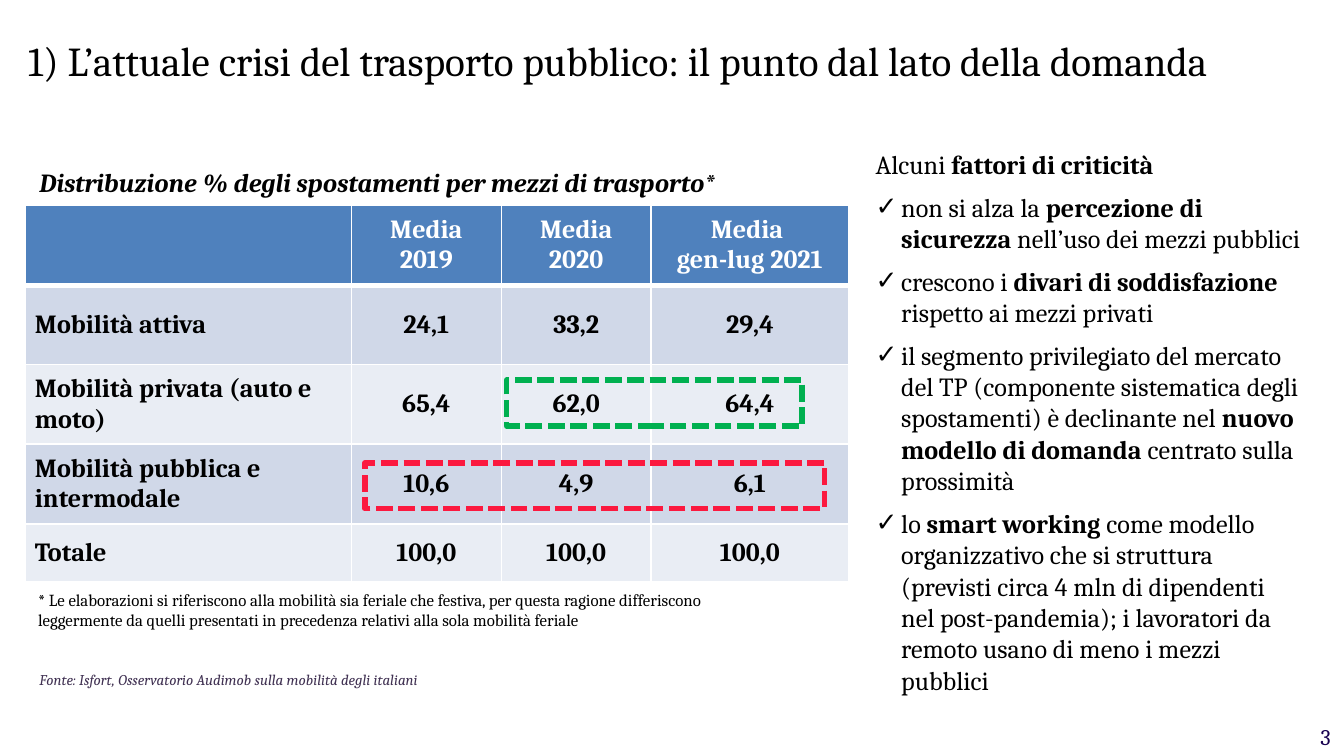
from dataclasses import dataclass

from lxml.etree import SubElement
from pptx import Presentation
from pptx.dml.color import RGBColor
from pptx.enum.dml import MSO_LINE_DASH_STYLE as Dash
from pptx.enum.shapes import MSO_SHAPE as Shape
from pptx.enum.text import MSO_ANCHOR as Anchor, MSO_AUTO_SIZE as AutoSize, PP_ALIGN as Align
from pptx.oxml.ns import qn
from pptx.util import Inches, Pt

# Grid: 100 columns by 56.25 rows of square cells
COLUMNS, ROWS, CELL = 100, 56.25, 0.1


@dataclass(frozen=True)
class Theme:
    font: str = "Cambria"
    black: str = "000000"
    white: str = "FFFFFF"
    header: str = "4F81BD"
    bands: tuple = ("D0D8E8", "E9EDF4")
    green: str = "00B050"
    red: str = "FB193F"
    source: str = "403152"
    number: str = "170050"
    title_size: float = 22
    body_size: float = 14
    number_size: float = 12
    note_size: float = 9
    source_size: float = 8


def grid(*cells):
    return [Inches(cell * CELL) for cell in cells]


class SlideBuilder:
    def __init__(self, theme):
        self.theme = theme
        self.presentation = Presentation()
        self.presentation.slide_width, self.presentation.slide_height = grid(COLUMNS, ROWS)
        self.slide = self.presentation.slides.add_slide(self.presentation.slide_layouts[1])

    def style(self, paragraph, size, color, bold=False, italic=False, align=Align.LEFT, gap=0, first=True):
        paragraph.alignment = align
        paragraph.space_before = Pt(0 if first else gap)
        paragraph.space_after = Pt(gap)
        for run in paragraph.runs:
            font = run.font
            font.name, font.size, font.bold, font.italic = self.theme.font, Pt(size), bold, italic
            font.color.rgb = RGBColor.from_string(color)

    def place(self, shape, box):
        shape.left, shape.top, shape.width, shape.height = grid(*box)
        shape.text_frame.auto_size = AutoSize.NONE

    def title(self, text, box):
        shape = self.slide.shapes.title
        self.place(shape, box)
        shape.text_frame.text = text
        shape.text_frame.vertical_anchor = Anchor.MIDDLE
        self.style(shape.text_frame.paragraphs[0], self.theme.title_size, self.theme.black)

    def checklist(self, items, box, indent=1.9):
        """Lead line followed by ticked items; ** marks bold stretches."""
        shape = self.slide.placeholders[1]
        self.place(shape, box)
        frame = shape.text_frame
        frame.text = "\n".join(items)
        hang = grid(indent)[0]
        for index, (paragraph, item) in enumerate(zip(frame.paragraphs, items)):
            paragraph.clear()
            properties = paragraph._p.get_or_add_pPr()
            properties.set("marL", str(hang if index else 0))
            properties.set("indent", str(-hang if index else 0))
            if index:
                SubElement(properties, qn("a:buChar"), char="✓")
            else:
                SubElement(properties, qn("a:buNone"))
            for part in item.split("**"):
                if part:
                    paragraph.add_run().text = part
            self.style(paragraph, self.theme.body_size, self.theme.black, gap=3, first=index == 0)
            for run in paragraph.runs[1::2]:
                run.font.bold = True

    def text(self, text, box, size, color=None, wrap=True, **options):
        shape = self.slide.shapes.add_textbox(*grid(*box))
        shape.text_frame.word_wrap = wrap
        shape.text_frame.text = text
        self.style(shape.text_frame.paragraphs[0], size, color or self.theme.black, **options)

    def borders(self, cell, widths):
        properties = cell._tc.get_or_add_tcPr()
        for side, width in zip("LRTB", widths):
            line = SubElement(properties, qn(f"a:ln{side}"), w=str(Pt(width)))
            fill = SubElement(line, qn("a:solidFill"))
            SubElement(fill, qn("a:srgbClr"), val=self.theme.white)

    def table(self, rows, corner, widths, heights):
        theme = self.theme
        box = (*corner, sum(widths), sum(heights))
        table = self.slide.shapes.add_table(len(rows), len(widths), *grid(*box)).table
        for column, width in zip(table.columns, grid(*widths)):
            column.width = width
        for row, height in zip(table.rows, grid(*heights)):
            row.height = height
        for r, values in enumerate(rows):
            for c, value in enumerate(values):
                cell = table.cell(r, c)
                self.borders(cell, (1, 1, 3 if r == 1 else 1, 3 if r == 0 else 1))
                cell.fill.solid()
                fill = theme.bands[(r - 1) % 2] if r else theme.header
                cell.fill.fore_color.rgb = RGBColor.from_string(fill)
                cell.vertical_anchor = Anchor.MIDDLE
                cell.margin_left = cell.margin_right = Inches(0.07)
                cell.margin_top = cell.margin_bottom = 0
                cell.text_frame.text = value
                self.style(cell.text_frame.paragraphs[0], theme.body_size,
                           theme.black if r else theme.white, bold=True,
                           align=Align.CENTER if c else Align.LEFT, gap=1)

    def highlight(self, box, color):
        shape = self.slide.shapes.add_shape(Shape.RECTANGLE, *grid(*box))
        shape.shadow.inherit = False
        shape.fill.background()
        shape.line.color.rgb = RGBColor.from_string(color)
        shape.line.width = Pt(3)
        shape.line.dash_style = Dash.SQUARE_DOT

    def save(self):
        self.presentation.save("out.pptx")


def main():
    theme = Theme()
    builder = SlideBuilder(theme)

    # Title and critical factors
    builder.title("1) L’attuale crisi del trasporto pubblico: il punto dal lato della domanda",
                  (1.1, 2.2, 95.3, 4.6))
    builder.checklist([
        "Alcuni **fattori di criticità",
        "non si alza la **percezione di sicurezza** nell’uso dei mezzi pubblici",
        "crescono i **divari di soddisfazione **rispetto ai mezzi privati",
        "il segmento privilegiato del mercato del TP (componente sistematica degli spostamenti) "
        "è declinante nel **nuovo modello di domanda **centrato sulla prossimità",
        "lo **smart working **come modello organizzativo che si struttura (previsti circa 4 mln "
        "di dipendenti nel post-pandemia); i lavoratori da remoto usano di meno i mezzi pubblici",
    ], (64.15, 10.55, 33.8, 44.4))

    # Modal split table
    builder.table([
        ["", "Media 2019", "Media 2020", "Media \vgen-lug 2021"],
        ["Mobilità attiva", "24,1", "33,2", "29,4"],
        ["Mobilità privata (auto e moto)", "65,4", "62,0", "64,4"],
        ["Mobilità pubblica e intermodale", "10,6", "4,9", "6,1"],
        ["Totale", "100,0", "100,0", "100,0"],
    ], (1.9, 15.3), (24.25, 11.15, 11.15, 14.7), (5.92,) * 4 + (4.3,))

    # Caption, note, source and page number
    builder.text("Distribuzione % degli spostamenti per mezzi di trasporto*", (1.95, 11.9, 53.4, 3.4),
                 theme.body_size, wrap=False, bold=True, italic=True, gap=2)
    builder.text("* Le elaborazioni si riferiscono alla mobilità sia feriale che festiva, per questa "
                 "ragione differiscono leggermente da quelli presentati in precedenza relativi alla "
                 "sola mobilità feriale", (1.85, 43.4, 51.5, 4), theme.note_size, gap=2)
    builder.text("Fonte: Isfort, Osservatorio Audimob sulla mobilità degli italiani",
                 (1.95, 49.4, 31.3, 2.4), theme.source_size, theme.source, wrap=False,
                 italic=True, align=Align.JUSTIFY, gap=2)
    builder.text("3", (95.7, 53.35, 4.3, 3), theme.number_size, theme.number, align=Align.RIGHT)

    # Highlighted figures
    builder.highlight((37.7, 28.3, 22, 3.4), theme.green)
    builder.highlight((27.15, 34.45, 34.2, 3.4), theme.red)

    builder.save()


if __name__ == "__main__":
    main()
